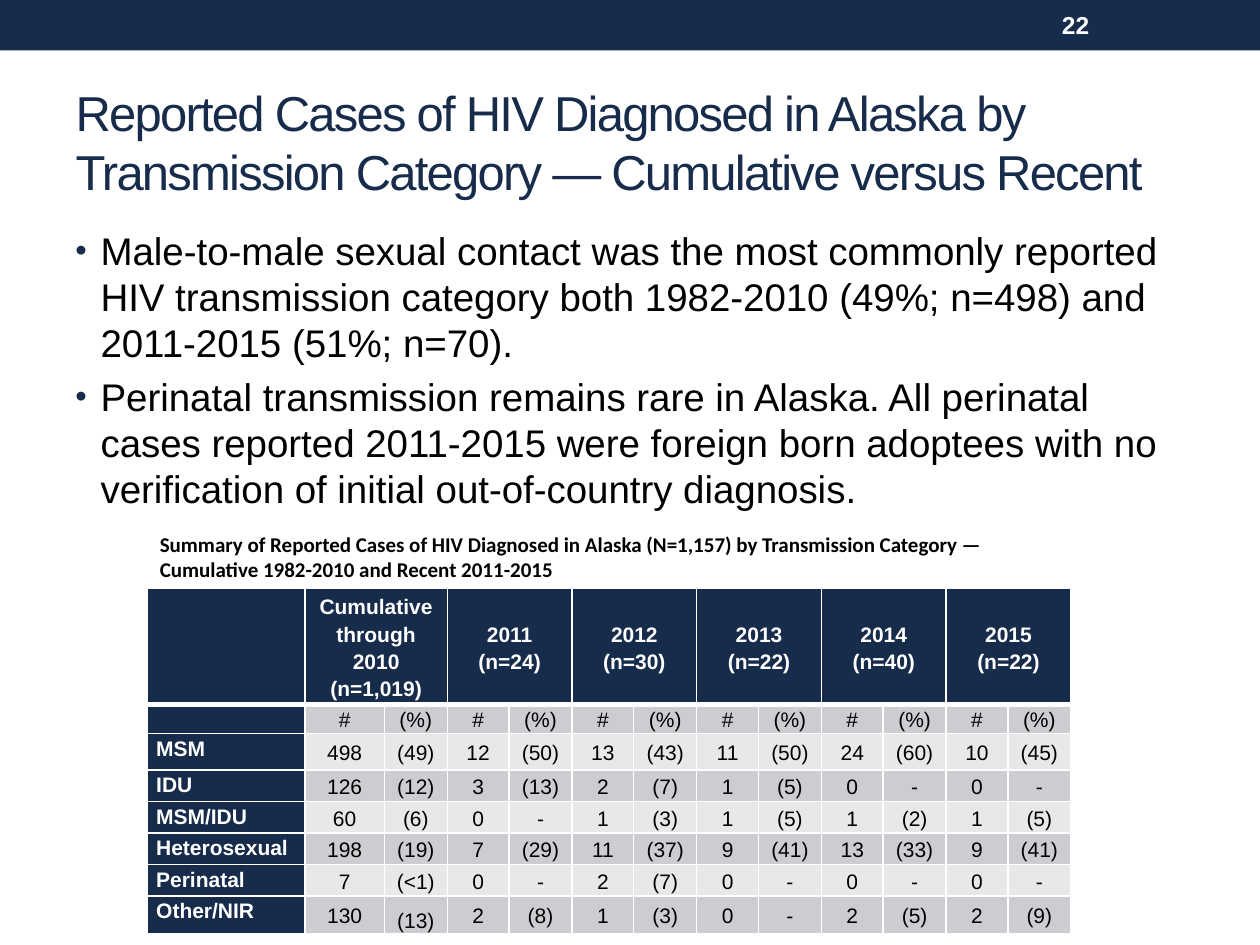
import pptx
import pptx.dml.color
import pptx.enum.shapes
import pptx.enum.text
import pptx.oxml
import pptx.oxml.ns
import pptx.util
from pptx.util import Inches

ALIGN = pptx.enum.text.PP_ALIGN
ANCHOR = pptx.enum.text.MSO_ANCHOR
NAMESPACE = pptx.oxml.ns.nsdecls("a")

YEARS = [("2011", 24), ("2012", 30), ("2013", 22), ("2014", 40), ("2015", 22)]
HEADINGS = ["Cumulative through 2010 (n=1,019)"] + [f"{year}\n(n={count})" for year, count in YEARS]
CASES = [
    ["", *["#", "(%)"] * len(HEADINGS)],
    ["MSM", "498", "(49)", "12", "(50)", "13", "(43)", "11", "(50)", "24", "(60)", "10", "(45)"],
    ["IDU", "126", "(12)", "3", "(13)", "2", "(7)", "1", "(5)", "0", "-", "0", "-"],
    ["MSM/IDU", "60", "(6)", "0", "-", "1", "(3)", "1", "(5)", "1", "(2)", "1", "(5)"],
    ["Heterosexual", "198", "(19)", "7", "(29)", "11", "(37)", "9", "(41)", "13", "(33)", "9", "(41)"],
    ["Perinatal", "7", "(<1)", "0", "-", "2", "(7)", "0", "-", "0", "-", "0", "-"],
    ["Other/NIR", "130", "(13)", "2", "(8)", "1", "(3)", "0", "-", "2", "(5)", "2", "(9)"],
]
COLUMN_WIDTHS = [1.25, 0.63, 0.5] + [0.49, 0.5] * len(YEARS)
ROW_HEIGHTS = [0.85, 0.22, 0.29] + [0.25] * 4 + [0.28]
FINDINGS = [
    "Male-to-male sexual contact was the most commonly reported HIV transmission category "
    "both 1982-2010 (49%; n=498) and 2011-2015 (51%; n=70).",
    "Perinatal transmission remains rare in Alaska. All perinatal cases reported 2011-2015 "
    "were foreign born adoptees with no verification of initial out-of-country diagnosis.",
]


def color(code):
    return pptx.dml.color.RGBColor.from_string(code)


class SlideBuilder:
    navy, white, black = "172B4B", "FFFFFF", "000000"
    bands = ["CCCDD0", "E8E8E9"]

    def __init__(self, deck):
        self.page = deck.slides.add_slide(deck.slide_layouts[5])

    def style(self, para, size, code, bold=False, face="Arial"):
        para.font.size = pptx.util.Pt(size)
        para.font.name = face
        para.font.bold = bold
        para.font.color.rgb = color(code)

    def band(self, left, top, width, height):
        bar = self.page.shapes.add_shape(
            pptx.enum.shapes.MSO_SHAPE.RECTANGLE, Inches(left), Inches(top), Inches(width), Inches(height))
        bar.shadow.inherit = False
        bar.fill.solid()
        bar.fill.fore_color.rgb = color(self.navy)
        bar.line.fill.background()

    def title(self, text, left, top, width, height):
        box = self.page.shapes.title
        box.left, box.top, box.width, box.height = map(Inches, (left, top, width, height))
        frame = box.text_frame
        frame.text = text
        frame.auto_size = pptx.enum.text.MSO_AUTO_SIZE.NONE
        frame.vertical_anchor = ANCHOR.MIDDLE
        para = frame.paragraphs[0]
        para.alignment = ALIGN.LEFT
        self.style(para, 28, self.navy)
        para.runs[0].font._element.set("spc", "-100")

    def text(self, lines, left, top, width, height, size, code, anchor=ANCHOR.MIDDLE, **font):
        box = self.page.shapes.add_textbox(Inches(left), Inches(top), Inches(width), Inches(height))
        frame = box.text_frame
        frame.word_wrap = True
        frame.vertical_anchor = anchor
        frame.text = "\n".join(lines)
        for para in frame.paragraphs:
            self.style(para, size, code, **font)
        return frame

    def bullets(self, lines, left, top, width, height):
        frame = self.text(lines, left, top, width, height, 22, self.black, ANCHOR.TOP)
        for para in frame.paragraphs:
            para.space_before = pptx.util.Pt(4.4)
            properties = para._p.get_or_add_pPr()
            properties.set("marL", str(Inches(0.2)))
            properties.set("indent", str(-Inches(0.2)))
            marks = [f'<a:buClr {NAMESPACE}><a:srgbClr val="{self.navy}"/></a:buClr>',
                     f'<a:buSzPct {NAMESPACE} val="85000"/>',
                     f'<a:buFont {NAMESPACE} typeface="Arial"/>',
                     f'<a:buChar {NAMESPACE} char="•"/>']
            defaults = properties.find(pptx.oxml.ns.qn("a:defRPr"))
            for mark in marks:
                defaults.addprevious(pptx.oxml.parse_xml(mark))

    def borders(self, cell, top=1, bottom=1):
        properties = cell._tc.get_or_add_tcPr()
        widths = {"lnL": 1, "lnR": 1, "lnT": top, "lnB": bottom}
        for place, (side, width) in enumerate(widths.items()):
            properties.insert(place, pptx.oxml.parse_xml(
                f'<a:{side} {NAMESPACE} w="{pptx.util.Pt(width)}"><a:solidFill>'
                f'<a:srgbClr val="{self.white}"/></a:solidFill></a:{side}>'))

    def cell(self, cell, text, fill, code, bold, alignment, anchor, spacing=1.15):
        cell.margin_left = cell.margin_right = Inches(0.07)
        cell.margin_top = cell.margin_bottom = 0
        cell.vertical_anchor = anchor
        cell.fill.solid()
        cell.fill.fore_color.rgb = color(fill)
        cell.text_frame.text = text
        for para in cell.text_frame.paragraphs:
            para.alignment = alignment
            para.line_spacing = spacing
            self.style(para, 12, code, bold)
            if not text:
                para._p.get_or_add_endParaRPr().set("sz", "1200")

    def table(self, left, top):
        frame = self.page.shapes.add_table(
            len(ROW_HEIGHTS), len(COLUMN_WIDTHS), Inches(left), Inches(top),
            Inches(sum(COLUMN_WIDTHS)), Inches(sum(ROW_HEIGHTS)))
        grid = frame.table
        for column, width in zip(grid.columns, COLUMN_WIDTHS):
            column.width = Inches(width)
        for row, height in zip(grid.rows, ROW_HEIGHTS):
            row.height = Inches(height)
        header = [""] + [part for heading in HEADINGS for part in (heading, "")]
        for column, heading in enumerate(header):
            cell = grid.cell(0, column)
            self.cell(cell, heading, self.navy, self.white, True, ALIGN.CENTER, ANCHOR.MIDDLE)
            self.borders(cell, bottom=3)
            if column % 2:
                cell.merge(grid.cell(0, column + 1))
        for row, values in enumerate(CASES, 1):
            for column, value in enumerate(values):
                cell = grid.cell(row, column)
                if column == 0:
                    self.cell(cell, value, self.navy, self.white, True, ALIGN.LEFT, ANCHOR.TOP)
                else:
                    spacing = 1.5 if (row, column) == (len(CASES), 2) else 1.15
                    self.cell(cell, value, self.bands[(row - 1) % 2], self.black, False,
                              ALIGN.CENTER, ANCHOR.MIDDLE, spacing)
                self.borders(cell, top=3 if row == 1 else 1)


def main():
    deck = pptx.Presentation()
    deck.slide_width, deck.slide_height = Inches(10), Inches(7.5)
    slide = SlideBuilder(deck)
    slide.band(0, 0, 10, 0.4)
    slide.title("Reported Cases of HIV Diagnosed in Alaska by Transmission Category "
                "— Cumulative versus Recent", 0.5, 0.58, 9, 1.08)
    slide.bullets(FINDINGS, 0.5, 1.75, 9, 2.42)
    slide.text(["22"], 8.33, 0.02, 1.17, 0.36, 14, slide.white, bold=True)
    slide.table(1.17, 4.67)
    slide.text(["Summary of Reported Cases of HIV Diagnosed in Alaska (N=1,157) by Transmission Category — "
                "Cumulative 1982-2010 and Recent 2011-2015"],
               1.17, 4.17, 7.33, 0.5, 12, slide.black, bold=True, face="Calibri")
    deck.save("out.pptx")


if __name__ == "__main__":
    main()
